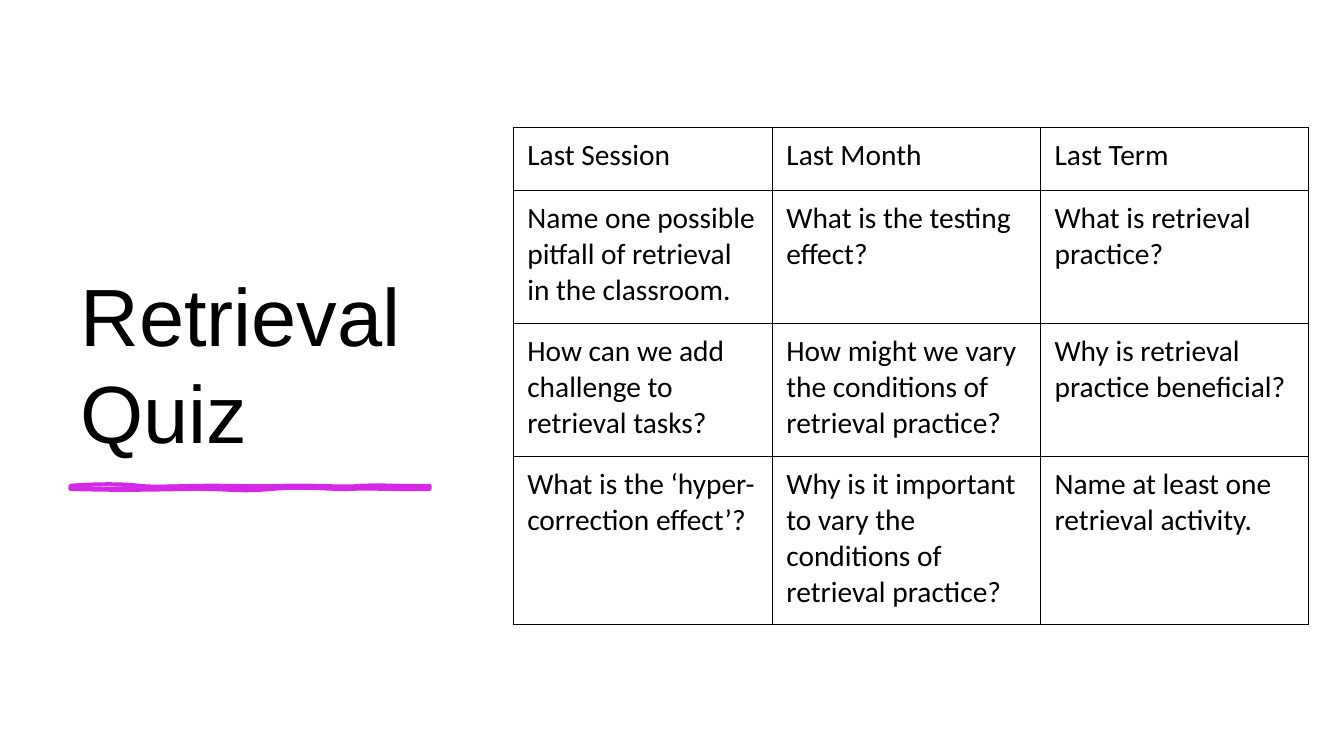
from lxml.etree import SubElement as Sub
from pptx import Presentation
from pptx.dml.color import RGBColor
from pptx.enum.shapes import MSO_SHAPE as Shape
from pptx.enum.text import MSO_ANCHOR as Anchor
from pptx.oxml.ns import qn
from pptx.util import Inches, Pt

BLACK = RGBColor(0x00, 0x00, 0x00)
WHITE = RGBColor(0xFF, 0xFF, 0xFF)
PINK = RGBColor(0xD4, 0x29, 0xE7)

# The slide is a grid of 1333 columns by 750 rows.
UNIT = Inches(0.01)
WIDE, HIGH = 1333, 750
LEFT = 70


def box(*cells):
    return [round(cell * UNIT) for cell in cells]


deck = Presentation()
deck.slide_width, deck.slide_height = box(WIDE, HIGH)
slide = deck.slides.add_slide(deck.slide_layouts[6])
shapes = slide.shapes

# Backdrop
back = shapes.add_shape(Shape.RECTANGLE, *box(0, 0, WIDE, HIGH))
back.shadow.inherit = False
back.fill.solid()
back.fill.fore_color.rgb = WHITE
back.line.fill.background()

# Title
frame = shapes.add_textbox(*box(LEFT, 70, 391, 391)).text_frame
frame.word_wrap = True
frame.vertical_anchor = Anchor.BOTTOM
title = frame.paragraphs[0]
title.text = "Retrieval Quiz"
for key, value in {"name": "Arial", "size": Pt(58)}.items():
    setattr(title.font, key, value)
title.font.color.rgb = BLACK

# Hand-drawn rule: an open loop of line and a filled stroke, in cubic curves
TOP, LONG, THICK = 482, 356, 3
LOOP = [
    (70, 482), (97, 480), (121, 480), (138, 482), (155, 484), (177, 482),
    (209, 482), (241, 482), (260, 483), (284, 482), (308, 481), (339, 484),
    (359, 482), (379, 481), (412, 483), (426, 482), (426, 483), (426, 485),
    (426, 485), (408, 486), (364, 484), (348, 485), (332, 486), (304, 482),
    (270, 485), (235, 488), (231, 485), (199, 485), (166, 485), (132, 487),
    (70, 485), (70, 484), (70, 483), (70, 482)]
STROKE = [
    (70, 482), (102, 484), (110, 483), (138, 482), (166, 481), (169, 480),
    (199, 482), (228, 484), (261, 483), (277, 482), (293, 481), (327, 485),
    (344, 482), (362, 480), (397, 486), (426, 482), (426, 484), (426, 484),
    (426, 485), (412, 485), (372, 488), (355, 485), (338, 483), (309, 485),
    (277, 485), (244, 485), (240, 484), (216, 485), (193, 486), (179, 484),
    (145, 485), (111, 486), (92, 485), (70, 485), (70, 484), (70, 484),
    (70, 482)]
pen = shapes.build_freeform(*box(LEFT, TOP))
pen.add_line_segments([box(LEFT + LONG, TOP),
                       box(LEFT + LONG, TOP + THICK),
                       box(LEFT, TOP + THICK)], close=True)
rule = pen.convert_to_shape()
rule.shadow.inherit = False
rule.fill.solid()
rule.fill.fore_color.rgb = PINK
rule.line.width = Pt(3)
rule.line.color.rgb = PINK

curves = next(rule._element.iter(qn("a:pathLst")))
for old in list(curves):
    curves.remove(old)
wide, high = box(LONG, THICK)
for knots, look in ((LOOP, {"fill": "none"}), (STROKE, {"stroke": "0"})):
    trace = Sub(curves, qn("a:path"), w=str(wide), h=str(high), **look)
    for i, (col, row) in enumerate(knots):
        if i == 0:
            step = Sub(trace, qn("a:moveTo"))
        elif i % 3 == 1:
            step = Sub(trace, qn("a:cubicBezTo"))
        x, y = box(col - LEFT, row - TOP)
        Sub(step, qn("a:pt"), x=str(x), y=str(y))
    Sub(trace, qn("a:close"))

# Question table
QUIZ = [
    ["Last Session", "Last Month", "Last Term"],
    ["Name one possible pitfall of retrieval in the classroom.",
     "What is the testing effect?",
     "What is retrieval practice?"],
    ["How can we add challenge to retrieval tasks?",
     "How might we vary the conditions of retrieval practice?",
     "Why is retrieval practice beneficial?"],
    ["What is the ‘hyper-correction effect’?",
     "Why is it important to vary the conditions of retrieval practice?",
     "Name at least one retrieval activity."]]
COLS = [257, 266, 266]
ROWS = [62, 132, 132, 167]
PADS = {"margin_left": 14 * UNIT, "margin_right": 14 * UNIT,
        "margin_top": 10 * UNIT, "margin_bottom": 10 * UNIT}
FONT = {"name": "Calibri", "size": Pt(21), "bold": False}

table = shapes.add_table(len(ROWS), len(COLS),
                         *box(509, 126.5, sum(COLS), sum(ROWS))).table
table.first_row = table.horz_banding = False
for col, width in zip(table.columns, COLS):
    col.width = width * UNIT
for row, height, texts in zip(table.rows, ROWS, QUIZ):
    row.height = height * UNIT
    for cell, text in zip(row.cells, texts):
        cell.text = text
        font = cell.text_frame.paragraphs[0].runs[0].font
        for target, look in ((cell, PADS), (font, FONT)):
            for key, value in look.items():
                setattr(target, key, value)
        font.color.rgb = BLACK
        props = cell._tc.get_or_add_tcPr()
        for side in ("lnL", "lnR", "lnT", "lnB"):
            edge = Sub(props, qn(f"a:{side}"), w=str(Pt(0.5)))
            Sub(Sub(edge, qn("a:solidFill")), qn("a:srgbClr"), val=str(BLACK))
        cell.fill.background()

deck.save("out.pptx")
